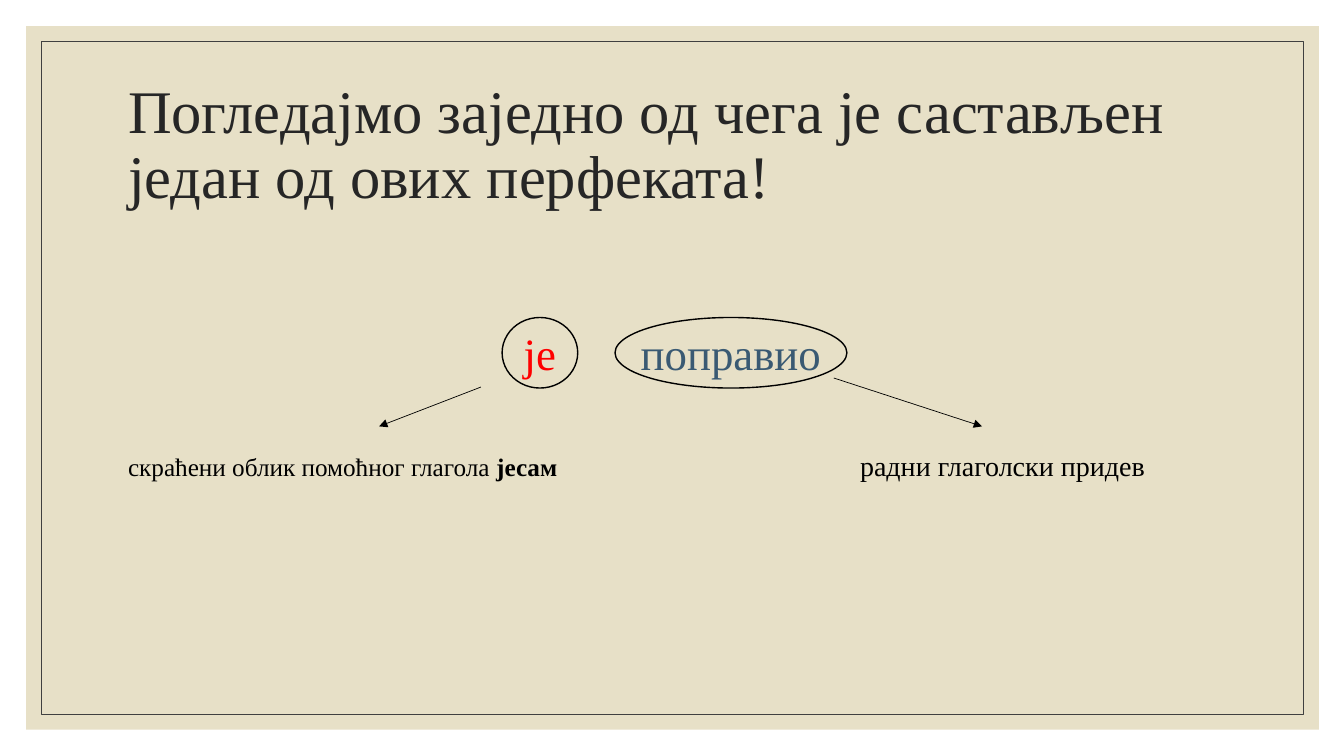
from dataclasses import dataclass

from lxml import etree
from pptx import Presentation
from pptx import util as u
from pptx.dml.color import RGBColor
from pptx.enum import shapes, text
from pptx.oxml import ns

EMU_PER_PX = 9144
FONT = "Times New Roman"
COLOURS = {
    "panel": "E7E0C7",
    "frame": "404040",
    "title": "262626",
    "auxiliary": "FF0000",
    "participle": "3A5A73",
    "ink": "000000",
}


@dataclass(frozen=True)
class Piece:
    words: str
    size: float
    colour: str = "ink"
    bold: bool = False


@dataclass(frozen=True)
class Outline:
    kind: shapes.MSO_SHAPE
    box: tuple[int, int, int, int]
    fill: str = ""
    line: str = ""
    weight: float = 1


@dataclass(frozen=True)
class Ring:
    outline: Outline
    word: Piece


@dataclass(frozen=True)
class Arrow:
    start: tuple[int, int]
    end: tuple[int, int]


@dataclass(frozen=True)
class Passage:
    box: tuple[int, int, int, int]
    pieces: list[Piece]
    anchor: text.MSO_ANCHOR = text.MSO_ANCHOR.TOP
    spacing: float = 1


BACKDROP = [
    Outline(shapes.MSO_SHAPE.RECTANGLE, (26, 26, 1282, 698), fill="panel"),
    Outline(shapes.MSO_SHAPE.RECTANGLE, (41, 41, 1252, 668), line="frame", weight=0.5),
]
RINGS = [
    Ring(
        Outline(shapes.MSO_SHAPE.OVAL, (498, 315, 75, 70), line="ink"),
        Piece("је", 32, "auxiliary"),
    ),
    Ring(
        Outline(shapes.MSO_SHAPE.OVAL, (610, 315, 230, 70), line="ink"),
        Piece("поправио", 32, "participle"),
    ),
]
ARROWS = [Arrow((477, 384), (376, 423)), Arrow((827, 375), (974, 423))]
PASSAGES = [
    Passage(
        (117, 70, 1100, 150),
        [Piece("Погледајмо заједно од чега је састављен један од ових перфеката!", 43.2, "title")],
        anchor=text.MSO_ANCHOR.MIDDLE,
        spacing=0.9,
    ),
    Passage(
        (117, 443, 520, 50),
        [Piece("скраћени облик помоћног глагола ", 18), Piece("јесам", 18, bold=True)],
    ),
    Passage((843, 440, 374, 50), [Piece("радни глаголски придев", 20)]),
]


def px(length: int) -> u.Emu:
    return u.Emu(length * EMU_PER_PX)


def colour(name: str) -> RGBColor:
    return RGBColor.from_string(COLOURS[name])


def write_pieces(paragraph, pieces: list[Piece]) -> None:
    for piece in pieces:
        run = paragraph.add_run()
        run.text = piece.words
        run.font.name = FONT
        run.font.size = u.Pt(piece.size)
        run.font.bold = piece.bold
        run.font.color.rgb = colour(piece.colour)


def draw_outline(slide, outline: Outline):
    shape = slide.shapes.add_shape(outline.kind, *map(px, outline.box))
    shape.shadow.inherit = False
    if outline.fill:
        shape.fill.solid()
        shape.fill.fore_color.rgb = colour(outline.fill)
    else:
        shape.fill.background()
    if outline.line:
        shape.line.color.rgb = colour(outline.line)
        shape.line.width = u.Pt(outline.weight)
    else:
        shape.line.fill.background()
    return shape


def draw_ring(slide, ring: Ring) -> None:
    frame = draw_outline(slide, ring.outline).text_frame
    frame.word_wrap = False
    frame.margin_left = frame.margin_right = 0
    frame.margin_top = frame.margin_bottom = 0
    frame.vertical_anchor = text.MSO_ANCHOR.MIDDLE
    frame.paragraphs[0].alignment = text.PP_ALIGN.CENTER
    write_pieces(frame.paragraphs[0], [ring.word])


def draw_arrow(slide, arrow: Arrow) -> None:
    connector = slide.shapes.add_connector(
        shapes.MSO_CONNECTOR.STRAIGHT, *map(px, arrow.start + arrow.end)
    )
    connector.line.color.rgb = colour("ink")
    connector.line.width = u.Pt(0.5)
    properties = connector.element.spPr
    etree.SubElement(properties.find(ns.qn("a:ln")), ns.qn("a:tailEnd"), type="triangle")
    etree.SubElement(properties, ns.qn("a:effectLst"))


def fill_placeholder(holder, passage: Passage) -> None:
    holder.left, holder.top, holder.width, holder.height = map(px, passage.box)
    frame = holder.text_frame
    frame.auto_size = text.MSO_AUTO_SIZE.NONE
    frame.word_wrap = True
    frame.vertical_anchor = passage.anchor
    paragraph = frame.paragraphs[0]
    paragraph.alignment = text.PP_ALIGN.LEFT
    paragraph.line_spacing = passage.spacing
    paragraph.space_before = u.Pt(0)
    properties = paragraph._p.get_or_add_pPr()
    properties.set("marL", "0")
    properties.set("indent", "0")
    etree.SubElement(properties, ns.qn("a:buNone"))
    write_pieces(paragraph, passage.pieces)


def main() -> None:
    deck = Presentation()
    deck.slide_width, deck.slide_height = px(1333), px(750)
    slide = deck.slides.add_slide(deck.slide_layouts.get_by_name("Two Content"))
    for holder, passage in zip(slide.placeholders, PASSAGES):
        fill_placeholder(holder, passage)
    for depth, outline in enumerate(BACKDROP):
        panel = draw_outline(slide, outline)
        slide.shapes.element.insert(2 + depth, panel.element)
    for ring in RINGS:
        draw_ring(slide, ring)
    for arrow in ARROWS:
        draw_arrow(slide, arrow)
    deck.save("out.pptx")


if __name__ == "__main__":
    main()
